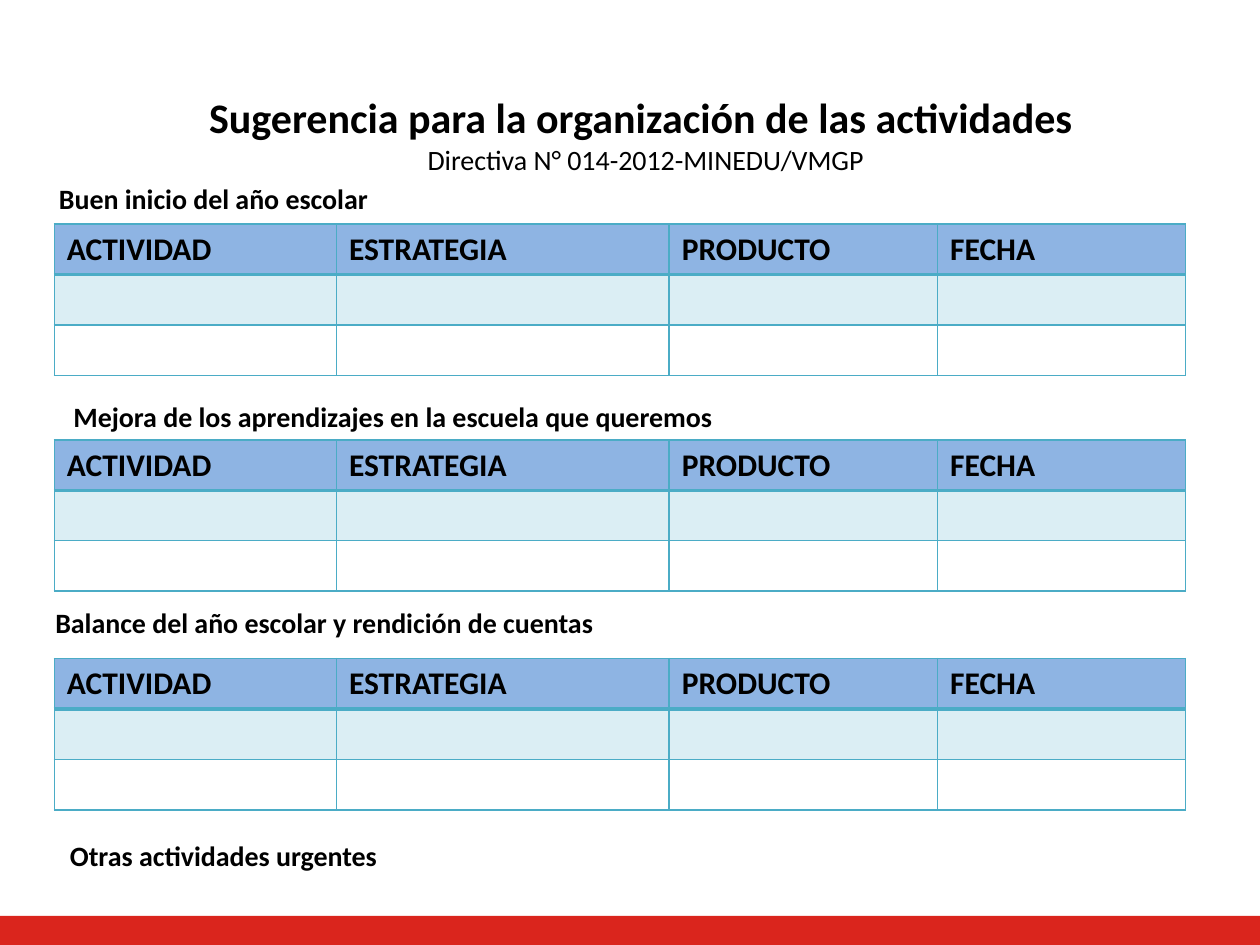
from lxml.etree import SubElement
from pptx import Presentation
from pptx.dml.color import RGBColor
from pptx.enum.shapes import MSO_SHAPE
from pptx.enum.text import MSO_ANCHOR, PP_ALIGN
from pptx.oxml import parse_xml
from pptx.oxml.ns import nsdecls, qn
from pptx.util import Pt

FONT = "Calibri"
BLACK, RED = "000000", "DA251D"
HEAD, BAND, EDGE = "8EB4E3", "DBEEF4", "4BACC6"

HEADS = ["ACTIVIDAD", "ESTRATEGIA", "PRODUCTO", "FECHA"]
WIDTHS = [161.3, 190.1, 153.4, 141.8]
ROWS, ROW_H = 3, 28.8
TABLE_X = 31
TABLE_TOPS = [128, 251.3, 376.3]

LABELS = [
    ("Buen inicio del año escolar", 25.2, 100.1, 193.7),
    ("Mejora de los aprendizajes en la escuela que queremos", 32.4, 224.9, 384.5),
    ("Balance del año escolar y rendición de cuentas", 22.3, 342.3, 326.2),
    ("Otras actividades urgentes", 31.7, 475.9, 192.2),
]


def paint(color, value):
    color.rgb = RGBColor.from_string(value)


def style(par, size, bold):
    for run in par.runs:
        font = run.font
        font.name, font.size, font.bold = FONT, Pt(size), bold
        paint(font.color, BLACK)


def add_bar(slide, x, y, w, h):
    bar = slide.shapes.add_shape(MSO_SHAPE.RECTANGLE, Pt(x), Pt(y), Pt(w), Pt(h))
    bar.shadow.inherit = False
    bar.fill.solid()
    paint(bar.fill.fore_color, RED)
    bar.line.fill.background()


def add_text(slide, lines, x, y, w, h, wrap):
    """Add centred text; each line is (words, size, bold)."""
    box = slide.shapes.add_textbox(Pt(x), Pt(y), Pt(w), Pt(h))
    frame = box.text_frame
    frame.word_wrap = wrap
    frame.text = "\n".join(line[0] for line in lines)
    for par, (_, size, bold) in zip(frame.paragraphs, lines):
        par.alignment = PP_ALIGN.CENTER
        style(par, size, bold)


def add_edges(cell, top, base):
    """Draw cell borders; top and base are line widths in points."""
    props = cell._tc.get_or_add_tcPr()
    sides = {"lnL": 1, "lnR": 1, "lnT": top, "lnB": base}
    for spot, (side, width) in enumerate(sides.items()):
        line = parse_xml(f'<a:{side} {nsdecls("a")} w="{Pt(width)}"/>')
        fill = SubElement(line, qn("a:solidFill"))
        SubElement(fill, qn("a:srgbClr")).set("val", EDGE)
        props.insert(spot, line)


def fill_cell(cell, color):
    if color:
        cell.fill.solid()
        paint(cell.fill.fore_color, color)
    else:
        cell.fill.background()


def add_grid(slide, top):
    shape = slide.shapes.add_table(
        ROWS, len(HEADS), Pt(TABLE_X), Pt(top), Pt(sum(WIDTHS)), Pt(ROWS * ROW_H)
    )
    table = shape.table
    for col, width in zip(table.columns, WIDTHS):
        col.width = Pt(width)
    for i, color in enumerate([HEAD, BAND, None]):
        table.rows[i].height = Pt(ROW_H)
        for cell in table.rows[i].cells:
            fill_cell(cell, color)
            add_edges(cell, 2 if i == 1 else 1, 2 if i == 0 else 1)
    for cell, head in zip(table.rows[0].cells, HEADS):
        cell.text_frame.text = head
        cell.vertical_anchor = MSO_ANCHOR.MIDDLE
        style(cell.text_frame.paragraphs[0], 18, True)


def main():
    deck = Presentation()
    deck.slide_width, deck.slide_height = Pt(720), Pt(540)
    slide = deck.slides.add_slide(deck.slide_layouts[6])
    add_bar(slide, 0, 523.4, 720, 16.6)
    title = [
        ("Sugerencia para la organización de las actividades ", 24, True),
        ("Directiva N° 014-2012-MINEDU/VMGP", 16, False),
    ]
    add_text(slide, title, 65.5, 49, 607, 55.4, True)
    for words, x, y, w in LABELS:
        add_text(slide, [(words, 16, True)], x, y, w, 26.6, False)
    for top in TABLE_TOPS:
        add_grid(slide, top)
    deck.save("out.pptx")


if __name__ == "__main__":
    main()
